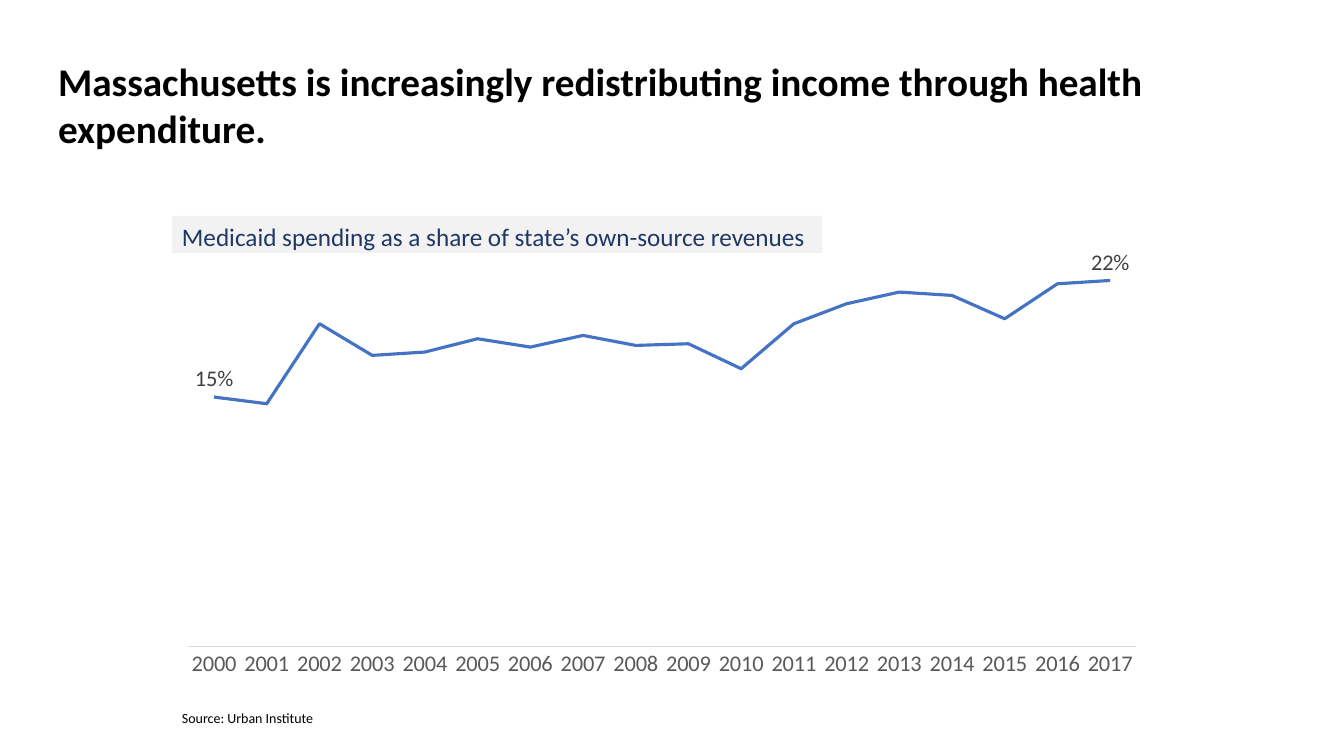
from pptx import Presentation, oxml
from pptx import util as u
from pptx.chart import data as chart_data
from pptx.dml import color
from pptx.enum import chart as chart_enum, shapes, text
from pptx.oxml import ns

TITLE = "Massachusetts is increasingly redistributing income through health expenditure."
CHART_HEADING = "Medicaid spending as a share of state’s own-source revenues"
SOURCE = "Source: Urban Institute"
FIRST_YEAR = 2000
SHARES = [
    0.150, 0.146, 0.194, 0.175, 0.177, 0.185, 0.180, 0.187, 0.181,
    0.182, 0.167, 0.194, 0.206, 0.213, 0.211, 0.197, 0.218, 0.220,
]
COLORS = {
    "black": "000000", "line": "4472C4", "axis": "D9D9D9", "axis_text": "595959",
    "label": "404040", "heading": "203864", "band": "F2F2F2",
}
BOXES = {
    "title": (48, 52, 1177, 105),
    "chart": (172, 182, 979, 511),
    "heading": (172, 216, 650, 37),
    "source": (172, 705, 154, 27),
}
PLOT = {"x": 0.016, "y": 0.095, "w": 0.969, "h": 0.815}
PX = u.Inches(1) / 100.8


def box(name):
    return [u.Emu(round(length * PX)) for length in BOXES[name]]


def rgb(name):
    return color.RGBColor.from_string(COLORS[name])


def apply(target, values):
    for name, value in values.items():
        setattr(target, name, value)


def style_font(font, size, color_name, bold=False):
    apply(font, {"name": "Calibri", "size": u.Pt(size), "bold": bold})
    font.color.rgb = rgb(color_name)


def write(shape, words, size, color_name, bold=False, wrap=False):
    frame = shape.text_frame
    fit = text.MSO_AUTO_SIZE.NONE if wrap else text.MSO_AUTO_SIZE.SHAPE_TO_FIT_TEXT
    apply(frame, {"word_wrap": wrap, "auto_size": fit,
                  "vertical_anchor": text.MSO_ANCHOR.TOP})
    paragraph = frame.paragraphs[0]
    paragraph.alignment = text.PP_ALIGN.LEFT
    run = paragraph.add_run()
    run.text = words
    style_font(run.font, size, color_name, bold)


def place_plot(chart):
    plot_area = chart._chartSpace.chart.plotArea
    for layout in plot_area.findall(ns.qn("c:layout")):
        plot_area.remove(layout)
    settings = {"layoutTarget": "inner", "xMode": "edge", "yMode": "edge", **PLOT}
    parts = "".join(f'<c:{key} val="{value}"/>' for key, value in settings.items())
    plot_area.insert(0, oxml.parse_xml(
        f'<c:layout {ns.nsdecls("c")}><c:manualLayout>{parts}</c:manualLayout></c:layout>'))


def add_share_chart(slide):
    data = chart_data.CategoryChartData(number_format="0%")
    data.categories = [str(FIRST_YEAR + index) for index in range(len(SHARES))]
    data.add_series("Medicaid share", SHARES)
    chart = slide.shapes.add_chart(chart_enum.XL_CHART_TYPE.LINE, *box("chart"), data).chart
    apply(chart, {"has_legend": False, "has_title": False})
    style_font(chart.font, 10, "black")
    place_plot(chart)

    apply(chart.value_axis, {"minimum_scale": 0, "maximum_scale": 0.25,
                             "has_major_gridlines": False, "visible": False})
    years = chart.category_axis
    apply(years, {"major_tick_mark": chart_enum.XL_TICK_MARK.NONE,
                  "has_major_gridlines": False})
    style_font(years.tick_labels.font, 16, "axis_text")
    years.format.line.color.rgb = rgb("axis")
    years.format.line.width = u.Pt(0.75)

    chart.plots[0].vary_by_categories = False
    series = chart.plots[0].series[0]
    series.smooth = False
    series.marker.style = chart_enum.XL_MARKER_STYLE.NONE
    series.format.line.color.rgb = rgb("line")
    series.format.line.width = u.Pt(2.25)
    series.data_labels.show_value = False
    for index in (0, len(SHARES) - 1):
        label = series.points[index].data_label
        style_font(label.font, 16, "label")
        label.position = chart_enum.XL_LABEL_POSITION.ABOVE


def main():
    presentation = Presentation()
    apply(presentation, {"slide_width": u.Inches(13.33), "slide_height": u.Inches(7.5)})
    slide = presentation.slides.add_slide(presentation.slide_layouts[5])

    title = slide.shapes.title
    apply(title, dict(zip(("left", "top", "width", "height"), box("title"))))
    write(title, TITLE, 28, "black", bold=True, wrap=True)

    add_share_chart(slide)

    heading = slide.shapes.add_shape(shapes.MSO_SHAPE.RECTANGLE, *box("heading"))
    heading.shadow.inherit = False
    heading.fill.solid()
    heading.fill.fore_color.rgb = rgb("band")
    heading.line.fill.background()
    write(heading, CHART_HEADING, 18, "heading")

    write(slide.shapes.add_textbox(*box("source")), SOURCE, 10, "black")
    presentation.save("out.pptx")


if __name__ == "__main__":
    main()
